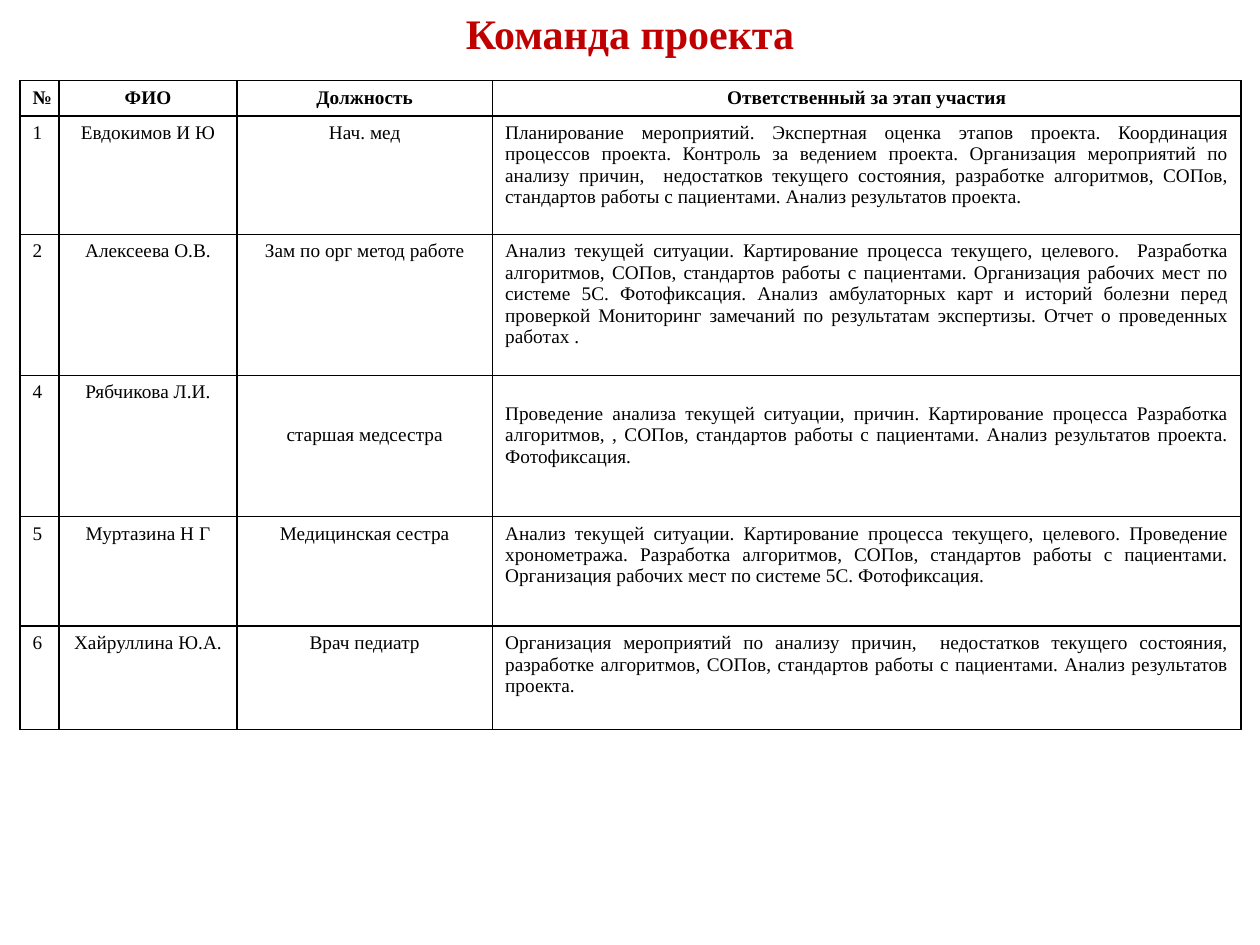
from lxml import etree
from pptx import Presentation
from pptx.dml.color import RGBColor
from pptx.enum.text import MSO_ANCHOR, PP_ALIGN
from pptx.oxml.ns import qn
from pptx.util import Inches, Pt

LEFT, CENTER, JUSTIFY = PP_ALIGN.LEFT, PP_ALIGN.CENTER, PP_ALIGN.JUSTIFY
MIDDLE = MSO_ANCHOR.MIDDLE
RED = RGBColor(0xC0, 0x00, 0x00)
BLACK = RGBColor(0x00, 0x00, 0x00)
FONT = "Times New Roman"
TITLE_ONLY = 5

HEADERS = ("№", "ФИО", "Должность", "Ответственный за этап участия")
TEAM = (
    ("1", "Евдокимов И Ю", "Нач. мед",
     "Планирование мероприятий. Экспертная оценка этапов проекта. Координация "
     "процессов проекта. Контроль за ведением проекта. Организация мероприятий по "
     "анализу причин,  недостатков текущего состояния, разработке алгоритмов, СОПов, "
     "стандартов работы с пациентами. Анализ результатов проекта."),
    ("2", "Алексеева О.В.", "Зам по орг метод работе",
     "Анализ текущей ситуации. Картирование процесса текущего, целевого.  Разработка "
     "алгоритмов, СОПов, стандартов работы с пациентами. Организация рабочих мест по "
     "системе 5С. Фотофиксация. Анализ амбулаторных карт и историй болезни перед "
     "проверкой Мониторинг замечаний по результатам экспертизы. Отчет о проведенных "
     "работах ."),
    ("4", "Рябчикова Л.И.", "старшая медсестра",
     "Проведение анализа текущей ситуации, причин. Картирование процесса Разработка "
     "алгоритмов, , СОПов, стандартов работы с пациентами. Анализ результатов проекта. "
     "Фотофиксация."),
    ("5", "Муртазина Н Г", "Медицинская сестра",
     "Анализ текущей ситуации. Картирование процесса текущего, целевого. Проведение "
     "хронометража. Разработка алгоритмов, СОПов, стандартов работы с пациентами. "
     "Организация рабочих мест по системе 5С. Фотофиксация."),
    ("6", "Хайруллина Ю.А.", "Врач педиатр",
     "Организация мероприятий по анализу причин,  недостатков текущего состояния, "
     "разработке алгоритмов, СОПов, стандартов работы с пациентами. Анализ результатов "
     "проекта."),
)
COLUMN_WIDTHS = (0.31, 1.41, 2.03, 5.94)
ROW_HEIGHTS = (0.28, 0.94, 1.12, 1.12, 0.87, 0.82)
BODY_ALIGNMENTS = (LEFT, CENTER, CENTER, JUSTIFY)
TOP_MARGINS = {(3, 2): 0.39, (3, 3): 0.22}


def style_paragraph(paragraph, size, color, bold, alignment):
    """Set the font and alignment of a paragraph."""
    paragraph.alignment = alignment
    font = paragraph.font
    font.name, font.size, font.bold = FONT, Pt(size), bold
    font.color.rgb = color


def add_borders(cell):
    """Draw a thin black line on all four sides of a cell."""
    properties = cell._tc.get_or_add_tcPr()
    for position, side in enumerate(("lnL", "lnR", "lnT", "lnB")):
        line = etree.Element(qn(f"a:{side}"), w=str(Pt(1)))
        fill = etree.SubElement(line, qn("a:solidFill"))
        etree.SubElement(fill, qn("a:srgbClr"), val=str(BLACK))
        properties.insert(position, line)


def place_title(slide, left, top, width, height):
    """Place and format the slide title."""
    title = slide.shapes.title
    title.left, title.top = Inches(left), Inches(top)
    title.width, title.height = Inches(width), Inches(height)
    frame = title.text_frame
    frame.text = "Команда проекта"
    frame.vertical_anchor = MIDDLE
    style_paragraph(frame.paragraphs[0], 24, RED, True, CENTER)


def add_team_table(slide, left, top):
    """Add the table of team members and their responsibilities."""
    table = slide.shapes.add_table(
        len(ROW_HEIGHTS), len(COLUMN_WIDTHS), Inches(left), Inches(top),
        Inches(sum(COLUMN_WIDTHS)), Inches(sum(ROW_HEIGHTS))).table
    table.first_row = table.horz_banding = False
    for column, width in zip(table.columns, COLUMN_WIDTHS):
        column.width = Inches(width)
    for r, texts in enumerate((HEADERS, *TEAM)):
        table.rows[r].height = Inches(ROW_HEIGHTS[r])
        is_header = r == 0
        for c, text in enumerate(texts):
            cell = table.cell(r, c)
            cell.text = text
            cell.margin_top = Inches(TOP_MARGINS.get((r, c), 0.05))
            cell.fill.background()
            add_borders(cell)
            alignment = CENTER if is_header else BODY_ALIGNMENTS[c]
            style_paragraph(cell.text_frame.paragraphs[0], 11, BLACK, is_header, alignment)


def main():
    """Build the project team slide."""
    presentation = Presentation()
    presentation.slide_width, presentation.slide_height = Inches(10), Inches(7.5)
    slide = presentation.slides.add_slide(presentation.slide_layouts[TITLE_ONLY])
    place_title(slide, 0.5, 0.13, 9, 0.26)
    add_team_table(slide, 0.16, 0.64)
    presentation.save("out.pptx")


if __name__ == "__main__":
    main()
